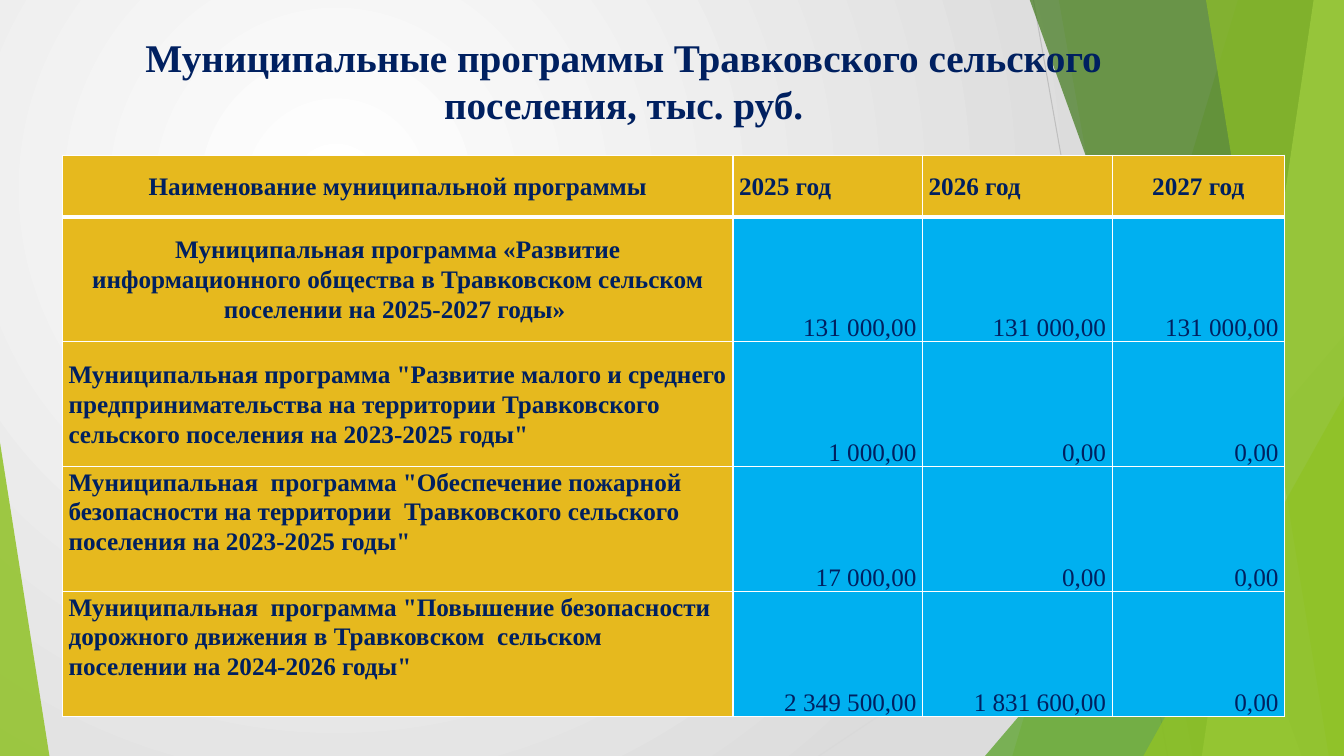
import pptx
import pptx.util
import pptx.oxml
import pptx.dml.color
import pptx.enum.shapes
import pptx.enum.text
from pptx.util import Inches

RGB = pptx.dml.color.RGBColor
ALIGN = pptx.enum.text.PP_ALIGN
ANCHOR = pptx.enum.text.MSO_ANCHOR
NS = 'xmlns:a="http://schemas.openxmlformats.org/drawingml/2006/main"'

FONT = "Times New Roman"
NAVY = RGB(0x00, 0x20, 0x60)
GOLD = RGB(0xE6, 0xB9, 0x1E)
SKY = RGB(0x00, 0xB0, 0xF0)
WHITE = RGB(0xFF, 0xFF, 0xFF)
MIST = RGB(0xDC, 0xDC, 0xDC)
GREY = RGB(0xBF, 0xBF, 0xBF)
PALE_GREY = RGB(0xD9, 0xD9, 0xD9)
LEAF = RGB(0x90, 0xC2, 0x26)
GRASS = RGB(0x54, 0xA0, 0x21)
FOREST = RGB(0x3F, 0x78, 0x19)
LIME = RGB(0xC0, 0xE4, 0x74)

WIDTH, HEIGHT = 13.33, 7.5

TITLE = "Муниципальные программы Травковского сельского поселения, тыс. руб."
HEADER = [
    ("Наименование муниципальной программы", ALIGN.CENTER),
    ("2025 год", ALIGN.LEFT),
    ("2026 год", ALIGN.LEFT),
    ("2027 год", ALIGN.CENTER),
]
PROGRAMS = [
    ("Муниципальная программа «Развитие информационного общества в Травковском "
     "сельском поселении на 2025-2027 годы» ", ALIGN.CENTER, ANCHOR.MIDDLE,
     ["131 000,00", "131 000,00", "131 000,00"]),
    ('Муниципальная программа "Развитие малого и среднего предпринимательства на '
     'территории Травковского сельского поселения на 2023-2025 годы"',
     ALIGN.LEFT, ANCHOR.MIDDLE, ["1 000,00", "0,00", "0,00"]),
    ('Муниципальная  программа "Обеспечение пожарной безопасности на территории  '
     'Травковского сельского поселения на 2023-2025 годы"',
     ALIGN.LEFT, ANCHOR.TOP, ["17 000,00", "0,00", "0,00"]),
    ('Муниципальная  программа "Повышение безопасности дорожного движения в '
     'Травковском  сельском поселении на 2024-2026 годы"',
     ALIGN.LEFT, ANCHOR.TOP, ["2 349 500,00", "1 831 600,00", "0,00"]),
]
COLUMNS = [6.65, 1.88, 1.88, 1.71]
ROWS = [0.61] + [1.24] * len(PROGRAMS)

RAYS = [((10.25, 0), (11.58, HEIGHT), GREY), ((WIDTH, 4.03), (8.12, HEIGHT), PALE_GREY)]
# kind, geometry, colour, opacity
FACETS = [
    ("band", (12.28, 10.04), LEAF, 30),
    ("band", (10.5, 11.83), LEAF, 20),
    ("triangle", (9.77, 3.33, 3.56, 4.17, 1), GRASS, 72),
    ("band", (10.21, 12.91), FOREST, 70),
    ("band", (13.03, 11.92), LIME, 70),
    ("band", (11.96, 13.18), LEAF, 65),
    ("triangle", (11.34, 3.93, 1.99, 3.57, 1), LEAF, 80),
    ("triangle", (0, 4.39, 0.49, 3.11, 0), LEAF, 85),
]


def paint_background(s):
    """Fill the slide with a soft radial gradient."""
    fill = s.background.fill
    fill.gradient()
    for stop, color in zip(fill.gradient_stops, (WHITE, MIST)):
        stop.color.rgb = color
    lin = next(s.background._cSld.iter("{*}lin"))
    lin.getparent().replace(lin, pptx.oxml.parse_xml(
        f'<a:path {NS} path="circle">'
        '<a:fillToRect l="50000" t="50000" r="100000" b="100000"/></a:path>'))


def add_ray(s, start, end, color):
    """Draw a thin decorative line."""
    ray = s.shapes.add_connector(pptx.enum.shapes.MSO_CONNECTOR.STRAIGHT,
                                 *map(Inches, start + end))
    ray.line.color.rgb = color
    ray.line.width = pptx.util.Pt(0.75)
    ray.element.spPr.append(pptx.oxml.parse_xml(f"<a:effectLst {NS}/>"))


def add_facet(s, kind, geometry, color, opacity):
    """Draw a translucent triangle or a band reaching the right edge."""
    if kind == "band":
        top_x, bottom_x = geometry
        builder = s.shapes.build_freeform(Inches(top_x), Inches(-0.01))
        corners = [(WIDTH, -0.01), (WIDTH, HEIGHT), (bottom_x, HEIGHT)]
        builder.add_line_segments([(Inches(x), Inches(y)) for x, y in corners], close=True)
        facet = builder.convert_to_shape()
    else:
        *box, apex = geometry
        facet = s.shapes.add_shape(pptx.enum.shapes.MSO_SHAPE.ISOSCELES_TRIANGLE,
                                   *map(Inches, box))
        facet.adjustments[0] = apex
    facet.shadow.inherit = False
    facet.line.fill.background()
    facet.fill.solid()
    facet.fill.fore_color.rgb = color
    srgb = next(facet.element.spPr.iter("{*}srgbClr"))
    srgb.append(pptx.oxml.parse_xml(f'<a:alpha {NS} val="{opacity * 1000}"/>'))


def write(tf, text, size, bold, align):
    """Put one formatted run into the first paragraph."""
    p = tf.paragraphs[0]
    p.alignment = align
    r = p.add_run()
    r.text = text
    r.font.name = FONT
    r.font.size = pptx.util.Pt(size)
    r.font.bold = bold
    r.font.color.rgb = NAVY
    return p


def fill_cell(cell, text, bold, align, anchor, color, top=1, bottom=1):
    """Format a table cell with its text, fill and white borders."""
    cell.margin_left = cell.margin_right = Inches(0.06)
    cell.margin_top = cell.margin_bottom = 0
    cell.vertical_anchor = anchor
    cell.fill.solid()
    cell.fill.fore_color.rgb = color
    write(cell.text_frame, text, 18, bold, align).line_spacing = 1.07
    tcPr = cell._tc.get_or_add_tcPr()
    for i, (side, width) in enumerate([("L", 1), ("R", 1), ("T", top), ("B", bottom)]):
        tcPr.insert(i, pptx.oxml.parse_xml(
            f'<a:ln{side} {NS} w="{pptx.util.Pt(width)}"><a:solidFill>'
            f'<a:srgbClr val="{WHITE}"/></a:solidFill></a:ln{side}>'))


def add_programs(s):
    """Build the table of programmes by year."""
    table = s.shapes.add_table(len(ROWS), len(COLUMNS), Inches(0.62), Inches(1.54),
                               Inches(sum(COLUMNS)), Inches(sum(ROWS))).table
    for column, width in zip(table.columns, COLUMNS):
        column.width = Inches(width)
    for row, height in zip(table.rows, ROWS):
        row.height = Inches(height)
    for j, (year, align) in enumerate(HEADER):
        fill_cell(table.cell(0, j), year, True, align, ANCHOR.MIDDLE, GOLD, bottom=3)
    for i, (name, align, anchor, sums) in enumerate(PROGRAMS, 1):
        top = 3 if i == 1 else 1
        fill_cell(table.cell(i, 0), name, True, align, anchor, GOLD, top)
        for j, amount in enumerate(sums, 1):
            fill_cell(table.cell(i, j), amount, False, ALIGN.RIGHT, ANCHOR.BOTTOM, SKY, top)


def main():
    """Build and save the slide."""
    prs = pptx.Presentation()
    prs.slide_width, prs.slide_height = Inches(WIDTH), Inches(HEIGHT)
    s = prs.slides.add_slide(prs.slide_layouts[5])
    paint_background(s)
    for ray in RAYS:
        add_ray(s, *ray)
    for facet in FACETS:
        add_facet(s, *facet)
    title = s.shapes.title
    title.element.getparent().append(title.element)
    title.left, title.top, title.width, title.height = map(Inches, (0.77, 0.23, 10.83, 1.13))
    title.text_frame.word_wrap = True
    title.text_frame.vertical_anchor = ANCHOR.MIDDLE
    write(title.text_frame, TITLE, 28, True, ALIGN.CENTER)
    add_programs(s)
    prs.save("out.pptx")


if __name__ == "__main__":
    main()
